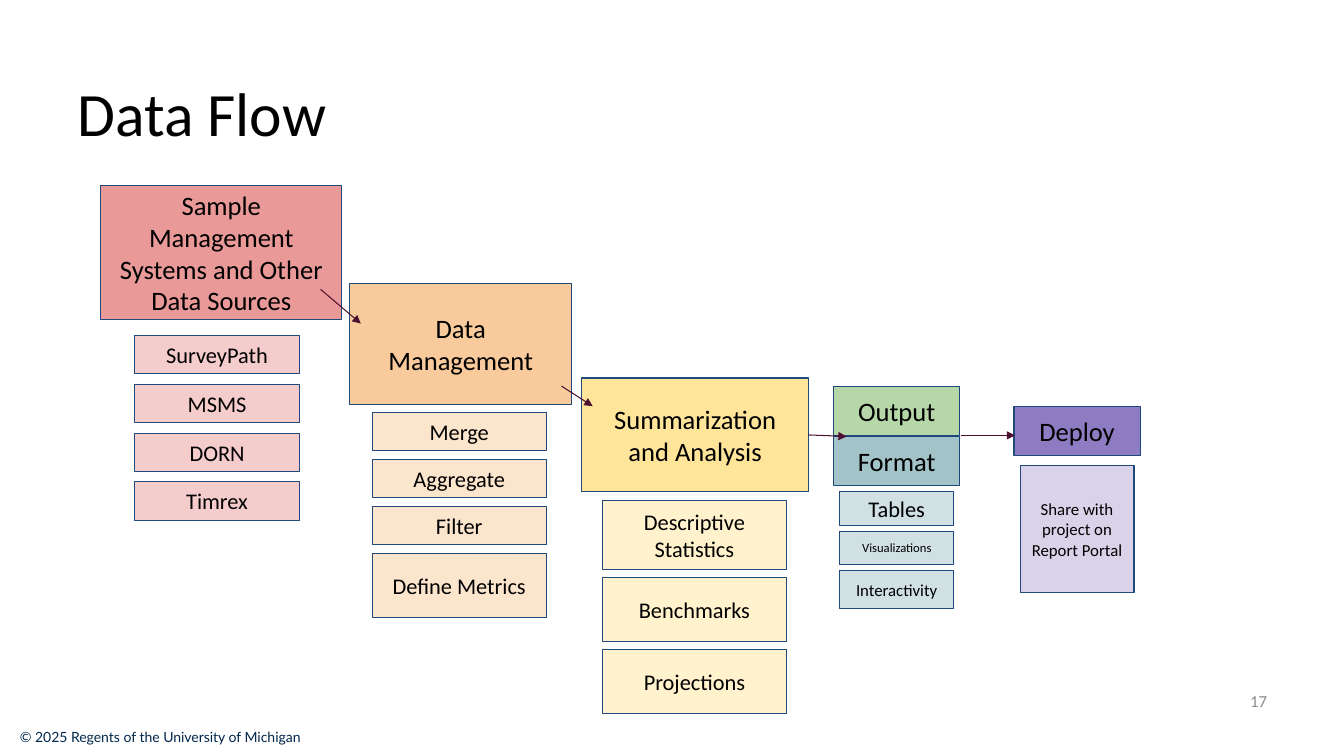
"""Build the Data Flow slide: five stages with their steps, joined by arrows."""
from lxml import etree
from pptx import Presentation, util as u
from pptx.dml.color import RGBColor
from pptx.enum import shapes, text
from pptx.oxml import ns

THEME = {
    "font": "Calibri", "footer_font": "Lato",
    "ink": "000000", "outline": "1F497D", "arrow": "4C1130",
    "number": "8C8C8C", "footer": "00274C",
    "title_size": 44, "head_size": 19, "step_size": 16,
    "small_size": 12, "tiny_size": 9, "footer_size": 10,
    "line": 0.75, "inset": 0.13, "tight": 0.1,
}
SLIDE_SIZE = (13.33, 7.5)
GRID = 100

TITLE = ("Data Flow", (5, 8.93, 90, 11.73))
NUMBER = ("17", (71.7, 90, 23.33, 5.33))
FOOTER = ("© 2025 Regents of the University of Michigan", (0.75, 95.73, 22.8, 3.6))

# Each stack: (left, width, top, bottom), then (label, height, fill, size).
ROSE, PEACH, CREAM, MIST, LILAC = "F4CCCC", "FCE5CD", "FFF2CC", "D0E0E3", "D9D2E9"
HEAD, STEP, SMALL, TINY = "head_size", "step_size", "small_size", "tiny_size"
STACKS = {
    "sources": ((7.5, 17.93, 24.53, 42.26), [
        ("Sample Management Systems and Other Data Sources", 17.73, "EA9999", HEAD)]),
    "source systems": ((10, 12.3, 44.4, 68.8), [
        ("SurveyPath", 5.07, ROSE, STEP), ("MSMS", 5.07, ROSE, STEP),
        ("DORN", 5.07, ROSE, STEP), ("Timrex", 5.07, ROSE, STEP)]),
    "management": ((26.03, 16.5, 37.47, 53.47), [
        ("Data Management", 16, "F9CB9C", HEAD)]),
    "management steps": ((27.68, 12.98, 54.53, 81.73), [
        ("Merge", 5.07, PEACH, STEP), ("Aggregate", 5.07, PEACH, STEP),
        ("Filter", 5.07, PEACH, STEP), ("Define Metrics", 8.53, PEACH, STEP)]),
    "analysis": ((43.28, 16.88, 50, 65.07), [
        ("Summarization and Analysis", 15.07, "FFE599", HEAD)]),
    "analysis steps": ((44.85, 13.65, 66.27, 94.4), [
        ("Descriptive Statistics", 9.07, CREAM, STEP),
        ("Benchmarks", 8.53, CREAM, STEP), ("Projections", 8.53, CREAM, STEP)]),
    "output": ((62.03, 9.38, 51.07, 64.27), [
        ("Output", 6.53, "B6D7A8", HEAD), ("Format", 6.53, "A2C4C9", HEAD)]),
    "output formats": ((62.48, 8.48, 65.07, 80.53), [
        ("Tables", 4.4, MIST, STEP), ("Visualizations", 4.4, MIST, TINY),
        ("Interactivity", 5.07, MIST, SMALL)]),
    "deploy": ((75.45, 9.38, 53.73, 60.26), [("Deploy", 6.53, "8E7CC3", HEAD)]),
    "deploy steps": ((75.9, 8.48, 61.6, 78.4), [
        ("Share with project on Report Portal", 16.8, LILAC, SMALL)]),
}
ARROWS = [
    ((23.85, 38.27), (26.85, 42.8), None),
    ((41.78, 51.07), (44.1, 53.73), None),
    ((60.16, 57.53), (63, 57.73), "Summarization and Analysis"),
    ((71.48, 57.6), (75.53, 57.6), None),
]


def color(key):
    return RGBColor.from_string(THEME.get(key, key))


def place(*cells):
    return [u.Inches(cell * SLIDE_SIZE[i % 2] / GRID) for i, cell in enumerate(cells)]


def write(holder, words, size, ink="ink", font="font", align=text.PP_ALIGN.LEFT,
          anchor=text.MSO_ANCHOR.MIDDLE, inset=None, wrap=True):
    frame = holder.text_frame
    frame.word_wrap = wrap
    frame.auto_size = text.MSO_AUTO_SIZE.NONE
    frame.vertical_anchor = anchor
    if inset:
        margin = u.Inches(THEME[inset])
        frame.margin_left = frame.margin_right = margin
        frame.margin_top = frame.margin_bottom = margin
    line = frame.paragraphs[0]
    line.alignment = align
    run = line.add_run()
    run.text = words
    run.font.name = THEME[font]
    run.font.size = u.Pt(THEME[size])
    run.font.color.rgb = color(ink)


def add_box(slide, cells, label, fill, size):
    box = slide.shapes.add_shape(shapes.MSO_SHAPE.RECTANGLE, *place(*cells))
    box.shadow.inherit = False
    box.fill.solid()
    box.fill.fore_color.rgb = color(fill)
    box.line.color.rgb = color("outline")
    box.line.width = u.Pt(THEME["line"])
    write(box, label, size, align=text.PP_ALIGN.CENTER,
          inset="tight" if fill == LILAC else "inset")
    return box


def add_stack(slide, extent, items):
    left, width, top, bottom = extent
    spare = bottom - top - sum(height for _, height, _, _ in items)
    gap = spare / max(len(items) - 1, 1)
    boxes = {}
    for label, height, fill, size in items:
        boxes[label] = add_box(slide, (left, top, width, height), label, fill, size)
        top += height + gap
    return boxes


def add_arrow(slide, start, end, source):
    arrow = slide.shapes.add_connector(
        shapes.MSO_CONNECTOR.STRAIGHT, *place(*start, *end))
    if source:
        arrow.begin_connect(source, 3)
    arrow.line.color.rgb = color("arrow")
    arrow.line.width = u.Pt(THEME["line"])
    outline = arrow.line._get_or_add_ln()
    etree.SubElement(outline, ns.qn("a:tailEnd"), type="triangle")
    etree.SubElement(arrow._element.spPr, ns.qn("a:effectLst"))


def main():
    deck = Presentation()
    deck.slide_width, deck.slide_height = map(u.Inches, SLIDE_SIZE)
    slide = deck.slides.add_slide(deck.slide_layouts[5])

    words, cells = FOOTER
    write(slide.shapes.add_textbox(*place(*cells)), words, "footer_size", "footer",
          "footer_font", anchor=text.MSO_ANCHOR.TOP, wrap=False)

    words, cells = TITLE
    title = slide.shapes.title
    title.left, title.top, title.width, title.height = place(*cells)
    write(title, words, "title_size")

    words, cells = NUMBER
    write(slide.shapes.add_textbox(*place(*cells)), words, "small_size", "number",
          align=text.PP_ALIGN.RIGHT)

    boxes = {}
    for extent, items in STACKS.values():
        boxes.update(add_stack(slide, extent, items))
    for start, end, source in ARROWS:
        add_arrow(slide, start, end, boxes.get(source))

    deck.save("out.pptx")


if __name__ == "__main__":
    main()
